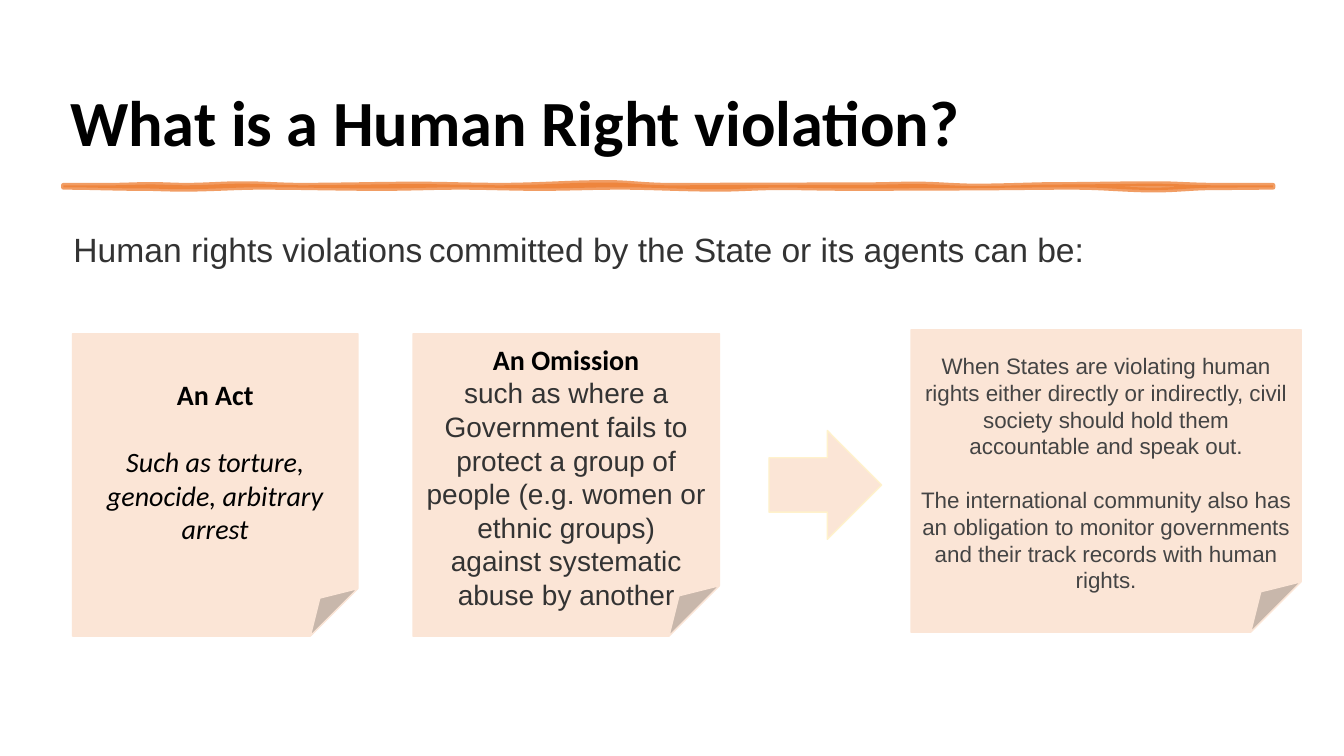
import math
import pptx
import pptx.util
import pptx.dml.color
import pptx.enum.shapes
import pptx.enum.text
import pptx.oxml.ns
from lxml import etree

Cm, Pt = pptx.util.Cm, pptx.util.Pt
RGBColor = pptx.dml.color.RGBColor
SHAPE = pptx.enum.shapes.MSO_SHAPE
ALIGN = pptx.enum.text.PP_ALIGN
ANCHOR = pptx.enum.text.MSO_ANCHOR

BLACK = RGBColor(0x00, 0x00, 0x00)
DARK = RGBColor(0x33, 0x33, 0x33)
GREY = RGBColor(0x44, 0x44, 0x44)
ORANGE = RGBColor(0xED, 0x7D, 0x31)
PEACH = RGBColor(0xFB, 0xE5, 0xD6)
CREAM = RGBColor(0xFF, 0xF2, 0xCC)

# Content: text pieces with their format
TITLE = "What is a Human Right violation?"
INTRO = [("Human rights violations", 24), (" ", 16),
         ("committed by the State or its agents can be:", 24)]
HEADING = dict(size=20, bold=True)
ACT = [("An Act", dict(HEADING, after=24)),
       ("Such as torture, genocide, arbitrary arrest", dict(size=20, italic=True))]
OMISSION = [("An Omission", HEADING),
            ("such as where a Government fails to protect a\u00a0group of people (e.g. women "
             "or ethnic groups) against\u00a0systematic abuse by another",
             dict(size=20, font="Arial", color=DARK))]
DUTY = dict(size=16, font="Arial", color=GREY)
RESPONSE = [("When States are violating human rights either directly or indirectly, civil "
             "society should hold them accountable and speak out.", dict(DUTY, after=19)),
            ("The international community also has an obligation to monitor governments "
             "and their track records with human rights.", DUTY)]

# Notes: left, top, width, top inset (cm), text
NOTE_HEIGHT = 7.62
NOTES = [(1.83, 8.41, 7.19, 0.13, ACT),
         (10.41, 8.41, 7.72, 0.98, OMISSION),
         (22.96, 8.31, 9.83, 0.98, RESPONSE)]

# Brush stroke: height of its wobble (cm) at places along it (cm)
STROKE_LEFT, STROKE_TOP, STROKE_WIDTH, STROKE_THICK = 1.6, 4.67, 30.48, 0.05
UPPER_EDGE = [(0, 0), (1.2, 0), (2.2, -0.02), (3.1, 0), (4.5, -0.04), (6, 0), (8.9, -0.03),
              (11, 0), (13.7, -0.07), (15.2, 0), (20, -0.01), (21.5, -0.03), (23, 0.02),
              (25.2, -0.02), (27.5, -0.04), (29, 0), (30.48, 0)]
LOWER_EDGE = [(0, 0), (2, 0.03), (3, 0.05), (5, 0), (8, 0.03), (10, 0), (12, 0.03),
              (14, 0), (16.5, 0.05), (18, 0.01), (20, 0.03), (22.5, 0.02), (25.5, 0),
              (27.5, 0.07), (29, 0.01), (30.48, 0)]


def add_text(para, text, size=20, font="Calibri", color=BLACK, bold=False, italic=False, after=0):
    span = para.add_run()
    span.text = text
    span.font.size, span.font.name = Pt(size), font
    span.font.bold, span.font.italic = bold, italic
    span.font.color.rgb = color
    para.space_after = Pt(after)


def paint(shape, fill, line, width):
    shape.shadow.inherit = False
    shape.fill.solid()
    shape.fill.fore_color.rgb = fill
    shape.line.color.rgb = line
    shape.line.width = Pt(width)


def add_box(left, top, width, height, anchor):
    box = page.shapes.add_textbox(Cm(left), Cm(top), Cm(width), Cm(height))
    box.text_frame.word_wrap = True
    box.text_frame.vertical_anchor = anchor
    para = box.text_frame.paragraphs[0]
    para.line_spacing = 0.9
    return para


def wave(edge, drop):
    """Points of one edge, eased from bump to bump."""
    points = []
    for (x1, y1), (x2, y2) in zip(edge, edge[1:]):
        for step in range(8):
            part = step / 8
            ease = (1 - math.cos(math.pi * part)) / 2
            points.append((x1 + (x2 - x1) * part, y1 + (y2 - y1) * ease + drop))
    return points + [(edge[-1][0], edge[-1][1] + drop)]


deck = pptx.Presentation()
deck.slide_width, deck.slide_height = Cm(33.87), Cm(19.05)
page = deck.slides.add_slide(deck.slide_layouts[6])

# Title
add_text(add_box(1.52, 0.86, 30.61, 3.3, ANCHOR.BOTTOM), TITLE, size=46, bold=True)

# Brush stroke under the title
outline = [(Cm(STROKE_LEFT + x), Cm(STROKE_TOP + y))
           for x, y in wave(UPPER_EDGE, 0) + wave(LOWER_EDGE, STROKE_THICK)[::-1]]
builder = page.shapes.build_freeform(*outline[0])
builder.add_line_segments(outline[1:], close=True)
stroke = builder.convert_to_shape()
paint(stroke, ORANGE, ORANGE, 3.5)
for color in stroke._element.spPr.iter(pptx.oxml.ns.qn("a:srgbClr")):
    etree.SubElement(color, pptx.oxml.ns.qn("a:alpha"), val="75000")

# Introduction
intro = add_box(1.6, 5.77, 29.87, 1.52, ANCHOR.TOP)
intro.space_before = Pt(10)
for text, size in INTRO:
    add_text(intro, text, size=size, font="Arial", color=DARK)

# Notes
for left, top, width, inset, content in NOTES:
    note = page.shapes.add_shape(SHAPE.FOLDED_CORNER, Cm(left), Cm(top), Cm(width), Cm(NOTE_HEIGHT))
    paint(note, PEACH, PEACH, 1)
    frame = note.text_frame
    frame.word_wrap = True
    frame.vertical_anchor = ANCHOR.MIDDLE
    frame.margin_top = Cm(inset)
    for index, (text, style) in enumerate(content):
        para = frame.add_paragraph() if index else frame.paragraphs[0]
        para.alignment = ALIGN.CENTER
        add_text(para, text, **style)

# Arrow
arrow = page.shapes.add_shape(SHAPE.RIGHT_ARROW, Cm(19.38), Cm(10.85), Cm(2.84), Cm(2.74))
paint(arrow, PEACH, CREAM, 1)

deck.save("out.pptx")
